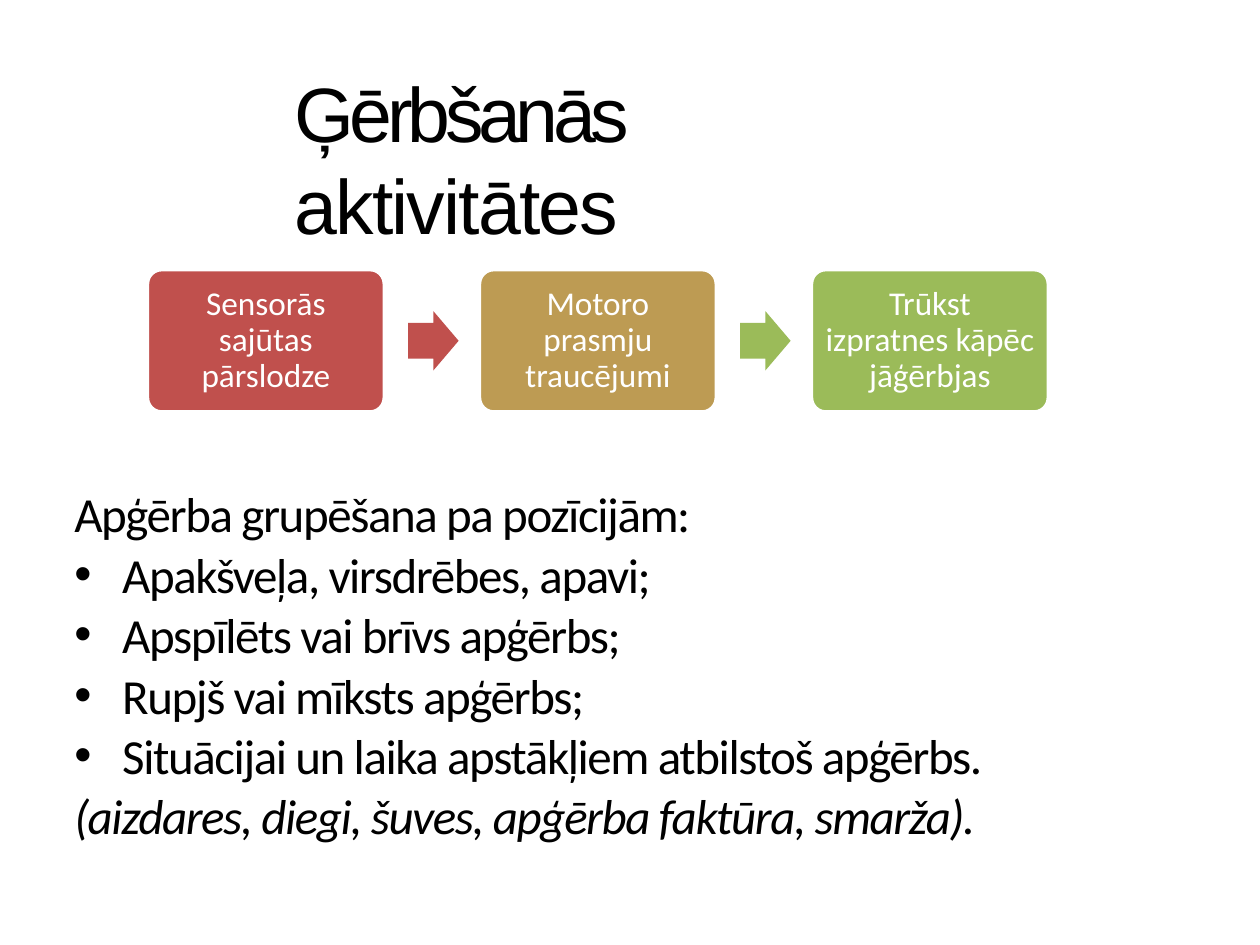
from dataclasses import dataclass

from lxml.etree import SubElement
from pptx import Presentation
from pptx.dml.color import RGBColor as RGB
from pptx.enum.shapes import MSO_SHAPE as Shape
from pptx.enum.text import MSO_ANCHOR as Anchor, MSO_AUTO_SIZE as Fit, PP_ALIGN as Align
from pptx.oxml.ns import qn
from pptx.util import Inches, Pt


@dataclass(frozen=True)
class Theme:
    title_font: str = "Arial"
    body_font: str = "Calibri"
    title_size: int = 44
    body_size: int = 28
    step_size: int = 19
    ink: str = "000000"
    paper: str = "FFFFFF"
    red: str = "C0504D"
    gold: str = "BD9B53"
    green: str = "9BBB59"


T = Theme()

# Process row: equal columns, with an arrow in each gap
ROW_LEFT, ROW_TOP, PITCH = 1.17, 2.14, 2.635
STEP_W, STEP_H = 1.88, 1.13
ARROW_W, ARROW_H, ARROW_OFFSET = 0.4, 0.47, 2.07
HANG = 0.38

STEPS = [
    ("Sensorās sajūtas pārslodze", T.red),
    ("Motoro prasmju traucējumi", T.gold),
    ("Trūkst izpratnes kāpēc jāģērbjas", T.green),
]
ARROW_COLORS = [T.red, T.green]

HEADING = "Apģērba grupēšana pa pozīcijām:"
BULLETS = [
    "Apakšveļa, virsdrēbes, apavi;",
    "Apspīlēts vai brīvs apģērbs;",
    "Rupjš vai mīksts apģērbs;",
    "Situācijai un laika apstākļiem atbilstoš apģērbs.",
]
REMARK = "(aizdares, diegi, šuves, apģērba faktūra, smarža)."


def setup_frame(tf, left=0, top=0.01, right=0, bottom=0, anchor=Anchor.TOP, fit=Fit.NONE):
    tf.word_wrap = True
    tf.auto_size = fit
    tf.vertical_anchor = anchor
    tf.margin_left, tf.margin_top = Inches(left), Inches(top)
    tf.margin_right, tf.margin_bottom = Inches(right), Inches(bottom)


def add_text(p, text, *, font=T.body_font, size=T.body_size, color=T.ink, italic=False, spacing=0):
    """Add a run; spacing is the letter spacing in points."""
    r = p.add_run()
    r.text = text
    r.font.name, r.font.size = font, Pt(size)
    r.font.color.rgb = RGB.from_string(color)
    r.font.italic = italic
    if spacing:
        r.font._element.set("spc", str(round(spacing * 100)))


def set_indent(p, left, first=0.0, bullet=None):
    pPr = p._p.get_or_add_pPr()
    pPr.set("marL", str(Inches(left)))
    pPr.set("indent", str(Inches(first)))
    if bullet:
        SubElement(pPr, qn("a:buFont")).set("typeface", "Arial")
        SubElement(pPr, qn("a:buChar")).set("char", bullet)


def add_block(s, kind, left, top, width, height, color, adjustments):
    sp = s.shapes.add_shape(kind, Inches(left), Inches(top), Inches(width), Inches(height))
    sp.shadow.inherit = False
    sp.fill.solid()
    sp.fill.fore_color.rgb = RGB.from_string(color)
    sp.line.fill.background()
    for i, value in enumerate(adjustments):
        sp.adjustments[i] = value
    return sp


def add_title(s):
    sp = s.shapes.title
    sp.left, sp.top, sp.width, sp.height = map(Inches, (2.33, 0.51, 5.33, 0.76))
    setup_frame(sp.text_frame, right=0.1, fit=Fit.SHAPE_TO_FIT_TEXT)
    p = sp.text_frame.paragraphs[0]
    p.alignment, p.space_before = Align.LEFT, Pt(1.1)
    set_indent(p, 0.01)
    for word, spacing in (("Ģērbšanās ", -3), ("aktivitātes", -1.1)):
        add_text(p, word, font=T.title_font, size=T.title_size, spacing=spacing)


def add_step(s, column, text, color):
    sp = add_block(s, Shape.ROUNDED_RECTANGLE, ROW_LEFT + column * PITCH, ROW_TOP,
                   STEP_W, STEP_H, color, [0.1])
    sp.line.color.rgb = RGB.from_string(T.paper)
    sp.line.width = Pt(2)
    setup_frame(sp.text_frame, 0.07, 0.07, 0.07, 0.07, Anchor.MIDDLE)
    p = sp.text_frame.paragraphs[0]
    p.alignment, p.line_spacing = Align.CENTER, 0.9
    add_text(p, text, size=T.step_size, color=T.paper)


def add_arrow(s, column, color):
    add_block(s, Shape.RIGHT_ARROW, ROW_LEFT + column * PITCH + ARROW_OFFSET,
              ROW_TOP + (STEP_H - ARROW_H) / 2, ARROW_W, ARROW_H, color, [0.6, 0.5])


def add_body(s):
    box = s.shapes.add_textbox(*map(Inches, (0.58, 3.83, 9.16, 2.91)))
    tf = box.text_frame
    setup_frame(tf, fit=Fit.SHAPE_TO_FIT_TEXT)
    for i, text in enumerate([HEADING, *BULLETS, REMARK]):
        p = tf.add_paragraph() if i else tf.paragraphs[0]
        p.alignment, p.space_before = Align.JUSTIFY, Pt(0.9)
        if text in BULLETS:
            set_indent(p, HANG + 0.01, -HANG, "•")
        else:
            set_indent(p, 0.01)
        add_text(p, text, italic=text == REMARK, spacing=-0.8)


def main():
    prs = Presentation()
    prs.slide_width, prs.slide_height = Inches(10), Inches(7.5)
    s = prs.slides.add_slide(prs.slide_layouts[5])  # title only
    add_title(s)
    add_body(s)
    for column, (text, color) in enumerate(STEPS):
        add_step(s, column, text, color)
    for column, color in enumerate(ARROW_COLORS):
        add_arrow(s, column, color)
    prs.save("out.pptx")


if __name__ == "__main__":
    main()
